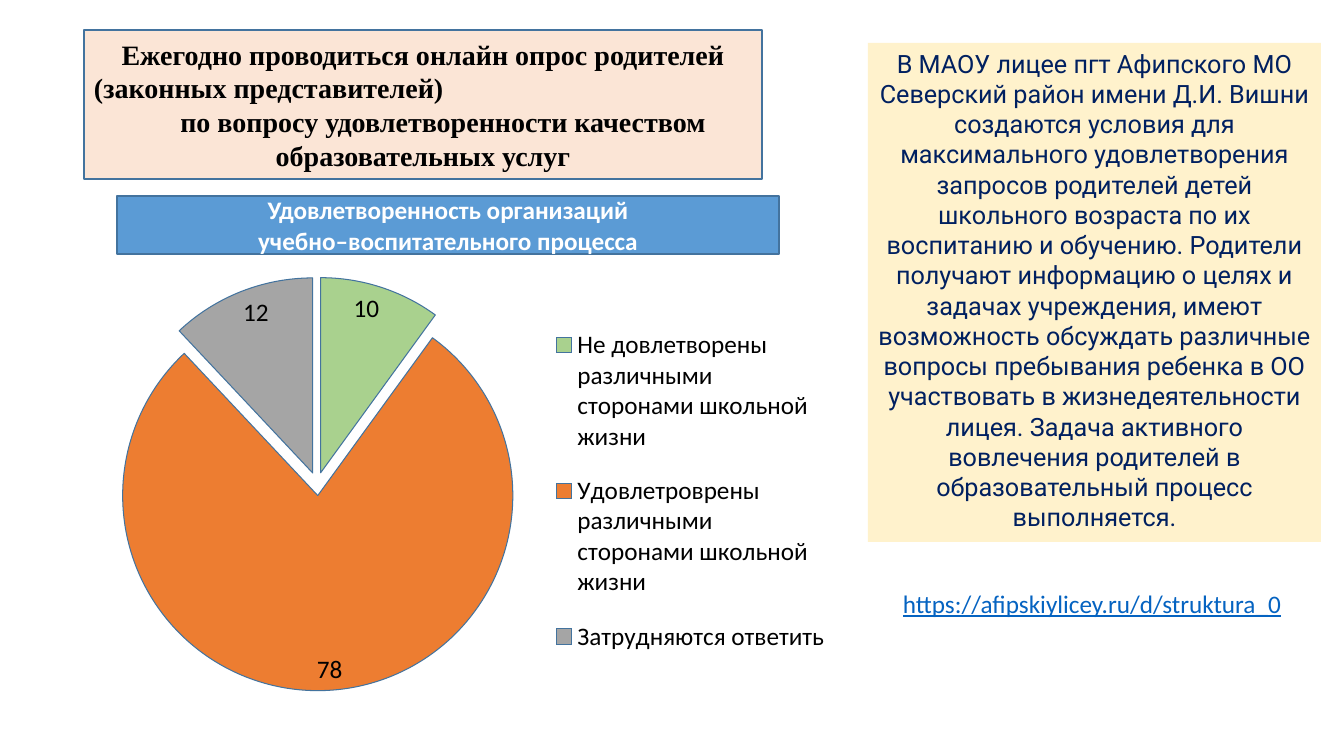
from lxml import etree
from pptx import Presentation
from pptx.chart.data import CategoryChartData
from pptx.dml.color import RGBColor
from pptx.enum.chart import XL_CHART_TYPE, XL_LABEL_POSITION, XL_LEGEND_POSITION
from pptx.enum.shapes import MSO_SHAPE
from pptx.enum.text import MSO_ANCHOR, PP_ALIGN
from pptx.oxml import parse_xml
from pptx.oxml.ns import nsdecls, qn
from pptx.util import Emu, Pt

PX = 914400 / 100.8
RECTANGLE = MSO_SHAPE.RECTANGLE
LEFT, CENTER = PP_ALIGN.LEFT, PP_ALIGN.CENTER
TOP, MIDDLE = MSO_ANCHOR.TOP, MSO_ANCHOR.MIDDLE
PIE = XL_CHART_TYPE.PIE
INSIDE_END = XL_LABEL_POSITION.INSIDE_END
LEGEND_RIGHT = XL_LEGEND_POSITION.RIGHT

COLORS = {
    "cream": "FFF2CC", "peach": "FBE5D6", "blue": "5B9BD5", "border": "43739E",
    "navy": "002060", "link": "0563C1", "black": "000000", "white": "FFFFFF",
    "green": "A9D18E", "orange": "ED7D31", "gray": "A5A5A5",
}

PARENTS_NOTE = (
    "В МАОУ лицее пгт Афипского МО Северский район имени Д.И. Вишни создаются "
    "условия для максимального удовлетворения запросов родителей детей школьного "
    "возраста по их воспитанию и обучению. Родители получают информацию о целях и "
    "задачах учреждения, имеют возможность обсуждать различные вопросы пребывания "
    "ребенка в ОО участвовать в жизнедеятельности лицея. Задача активного "
    "вовлечения родителей в образовательный процесс выполняется."
)
SURVEY_TITLE = [
    ("Ежегодно проводиться онлайн опрос родителей", CENTER, 0),
    ("(законных представителей)", LEFT, 0),
    ("по вопросу удовлетворенности качеством образовательных услуг", CENTER, 40),
]
CHART_TITLE = [
    ("Удовлетворенность организаций", CENTER, 0),
    ("учебно–воспитательного процесса", CENTER, 0),
]
ANSWERS = [
    ("Не довлетворены различными сторонами школьной жизни", 10, "green"),
    ("Удовлетроврены различными сторонами школьной жизни", 78, "orange"),
    ("Затрудняются ответить", 12, "gray"),
]


def px(value):
    return Emu(round(value * PX))


def rgb(name):
    return RGBColor.from_string(COLORS[name])


def write(frame, paragraphs, font, size, color, bold=False, underline=False):
    for index, (text, alignment, indent) in enumerate(paragraphs):
        paragraph = frame.paragraphs[0] if index == 0 else frame.add_paragraph()
        paragraph.alignment = alignment
        if indent:
            paragraph._p.get_or_add_pPr().set("indent", str(px(indent)))
        run = paragraph.add_run()
        run.text = text
        run.font.name = font
        run.font.size = Pt(size)
        run.font.bold = bold
        run.font.underline = underline
        run.font.color.rgb = rgb(color)


def add_panel(slide, box, fill, border=None, anchor=MIDDLE):
    panel = slide.shapes.add_shape(RECTANGLE, *map(px, box))
    panel.shadow.inherit = False
    panel.fill.solid()
    panel.fill.fore_color.rgb = rgb(fill)
    if border:
        panel.line.color.rgb = rgb(border)
        panel.line.width = Pt(1)
    else:
        panel.line.fill.background()
    panel.text_frame.word_wrap = True
    panel.text_frame.vertical_anchor = anchor
    return panel.text_frame


def set_layout(parent, successors, area, inner=False):
    for old in parent.findall(qn("c:layout")):
        parent.remove(old)
    layout = parse_xml(f'<c:layout {nsdecls("c")}/>')
    manual = etree.SubElement(layout, qn("c:manualLayout"))
    settings = [("layoutTarget", "inner")] if inner else []
    settings += [("xMode", "edge"), ("yMode", "edge")]
    settings += zip("xywh", area)
    for tag, value in settings:
        etree.SubElement(manual, qn(f"c:{tag}")).set("val", str(value))
    parent.insert_element_before(layout, *successors)


def add_answers_pie(slide, box):
    data = CategoryChartData()
    data.categories = [answer for answer, _, _ in ANSWERS]
    data.add_series("Series 1", [share for _, share, _ in ANSWERS])
    chart = slide.shapes.add_chart(PIE, *map(px, box), data).chart
    chart.has_title = False
    chart.font.name = "Calibri"
    chart.font.size = Pt(18)
    chart.font.color.rgb = rgb("black")

    chart.has_legend = True
    chart.legend.position = LEGEND_RIGHT
    chart.legend.include_in_layout = False
    set_layout(chart.legend._element, ("c:overlay", "c:spPr", "c:txPr"),
               (0.64, 0.1, 0.36, 0.83))
    plot_area = chart._chartSpace.chart.plotArea
    set_layout(plot_area, ("c:pieChart",), (0.05, 0.03, 0.54, 0.94), inner=True)

    plot = chart.plots[0]
    plot.vary_by_categories = True
    plot.has_data_labels = True
    plot.data_labels.show_value = True
    plot.data_labels.show_percentage = False
    plot.data_labels.position = INSIDE_END
    series = plot.series[0]
    explosion = parse_xml(f'<c:explosion {nsdecls("c")} val="6"/>')
    series._element.find(qn("c:cat")).addprevious(explosion)
    for index, (_, _, color) in enumerate(ANSWERS):
        slice_format = series.points[index].format
        slice_format.fill.solid()
        slice_format.fill.fore_color.rgb = rgb(color)
        slice_format.line.color.rgb = rgb("border")
        slice_format.line.width = Pt(0.75)
    for point in series._element.findall(qn("c:dPt")):
        explosion.addprevious(point)
    first_point = series._element.find(qn("c:dPt"))
    first_point.addprevious(explosion)


def main():
    presentation = Presentation()
    presentation.slide_width = px(1344)
    presentation.slide_height = px(756)
    slide = presentation.slides.add_slide(presentation.slide_layouts[6])

    parents_note = add_panel(slide, (868, 43, 453, 499), "cream", anchor=TOP)
    write(parents_note, [(PARENTS_NOTE, CENTER, 0)], "Roboto", 18, "navy")

    site_address = slide.shapes.add_textbox(*map(px, (893, 583, 403, 72))).text_frame
    site_address.word_wrap = False
    write(site_address, [("https://afipskiylicey.ru/d/struktura_0", LEFT, 0)],
          "Calibri", 18, "link", underline=True)

    survey_title = add_panel(slide, (84, 30, 678, 149), "peach", "border")
    write(survey_title, SURVEY_TITLE, "Times New Roman", 20, "black", bold=True)

    add_answers_pie(slide, (72, 261, 766, 446))

    chart_title = add_panel(slide, (117, 196, 662, 58), "blue", "border")
    write(chart_title, CHART_TITLE, "Calibri", 18, "white", bold=True)

    presentation.save("out.pptx")


if __name__ == "__main__":
    main()
